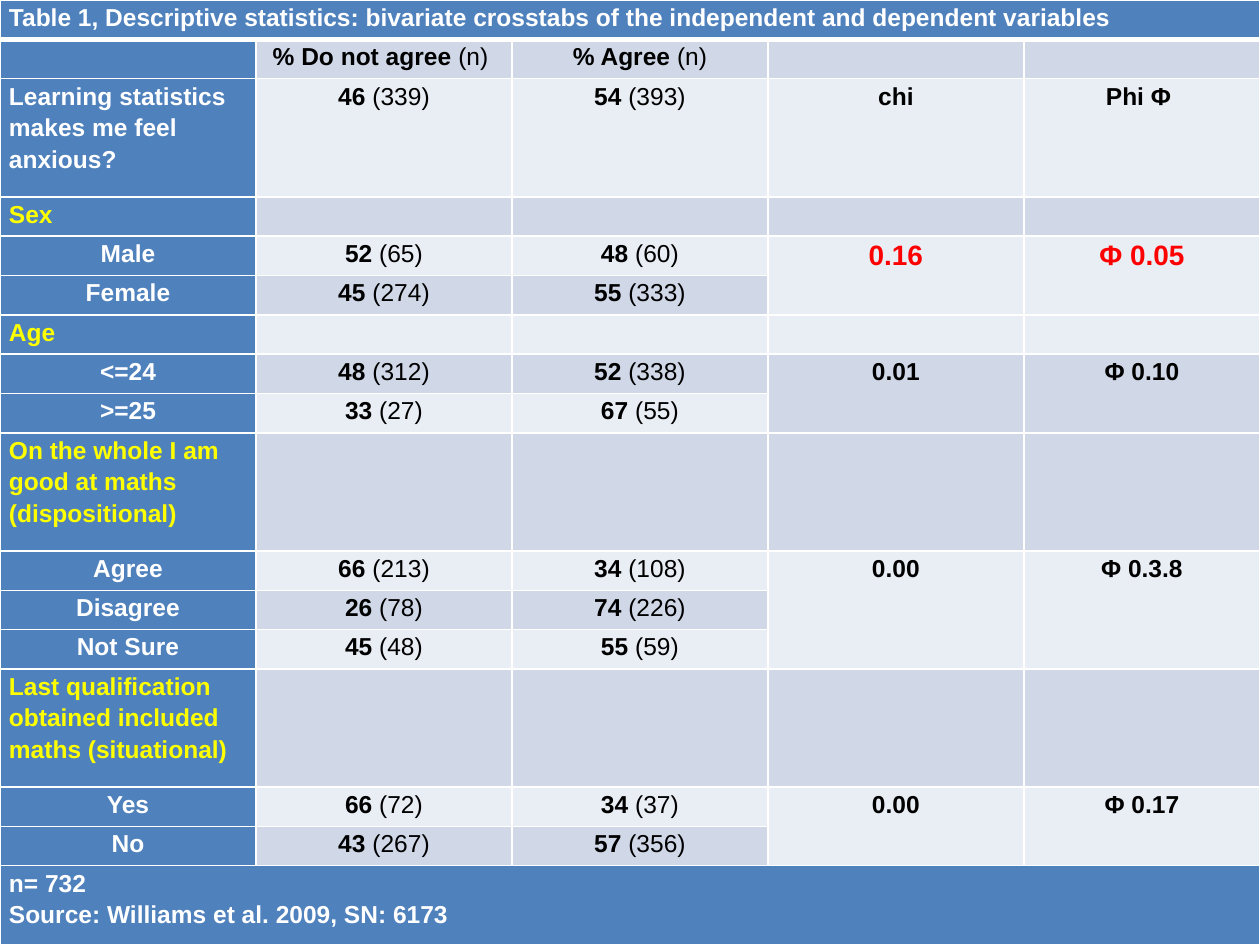
from lxml.etree import SubElement
from pptx import Presentation
from pptx.dml.color import RGBColor
from pptx.enum.text import PP_ALIGN
from pptx.oxml.ns import qn
from pptx.util import Cm, Pt

COLOURS = {
    "header": "4F81BD", "odd": "D0D8E8", "even": "E9EDF4",
    "white": "FFFFFF", "black": "000000", "group": "FFFF00", "alert": "FF0000",
}
FONT = "Arial"
WIDTH, HEIGHT = 25.4, 19.05
COLUMN_WIDTHS = [5.16, 5.16, 5.16, 5.16, 4.76]
COLUMNS = len(COLUMN_WIDTHS)

TITLE = "Table 1, Descriptive statistics: bivariate crosstabs of the independent and dependent variables"
HEADINGS = [("% Do not agree ", "(n) "), ("% Agree ", "(n)")]
QUESTION = ("Learning statistics makes me feel anxious?",
            [("46 ", "(339)"), ("54 ", "(393)"), ("chi",), ("Phi Φ ",)])
# group, height in lines, chi, phi, colour and size of both, answers with percentages and counts
GROUPS = [
    ("Sex", 1, "0.16", "Φ 0.05", "alert", 16,
     [("Male", 52, 65, 48, 60), ("Female", 45, 274, 55, 333)]),
    ("Age", 1, "0.01", "Φ 0.10", "black", 14,
     [("<=24", 48, 312, 52, 338), (">=25", 33, 27, 67, 55)]),
    ("On the whole I am good at maths (dispositional)", 3, "0.00", "Φ 0.3.8", "black", 14,
     [("Agree", 66, 213, 34, 108), ("Disagree", 26, 78, 74, 226), ("Not Sure", 45, 48, 55, 59)]),
    ("Last qualification obtained included maths (situational)", 3, "0.00", "Φ 0.17", "black", 14,
     [("Yes", 66, 72, 34, 37), ("No", 43, 267, 57, 356)]),
]
FOOTER = "n= 732\nSource: Williams et al. 2009, SN: 6173"

# Height of each row in text lines
ROW_LINES = [1, 1, 3]
for group in GROUPS:
    ROW_LINES += [group[1]] + [1] * len(group[-1])
ROW_LINES.append(2)
LAST_ROW = len(ROW_LINES) - 1


def add_borders(cell, bottom_width):
    properties = cell._tc.get_or_add_tcPr()
    for side, width in (("L", 1), ("R", 1), ("T", 1), ("B", bottom_width)):
        line = SubElement(properties, qn(f"a:ln{side}"), w=str(Pt(width)))
        fill = SubElement(line, qn("a:solidFill"))
        SubElement(fill, qn("a:srgbClr"), val=COLOURS["white"])


def format_cell(cell, row, column):
    add_borders(cell, 3 if row == 0 else 1)
    if column == 0 or row in (0, LAST_ROW):
        colour = "header"
    else:
        colour = "odd" if row % 2 else "even"
    cell.fill.solid()
    cell.fill.fore_color.rgb = RGBColor.from_string(COLOURS[colour])
    cell.margin_left = cell.margin_right = Cm(0.18)
    cell.margin_top = cell.margin_bottom = 0
    cell.text_frame.paragraphs[0].font.size = Pt(14)


def write(cell, parts, colour="black", size=14, align=PP_ALIGN.CENTER):
    """Write the first part in bold and any second part in regular weight."""
    cell.text = parts[0]
    for part in parts[1:]:
        cell.text_frame.paragraphs[0].add_run().text = part
    for paragraph in cell.text_frame.paragraphs:
        paragraph.alignment = align
        paragraph.line_spacing = 1.15
        for index, span in enumerate(paragraph.runs):
            span.font.name = FONT
            span.font.size = Pt(size)
            span.font.bold = index == 0
            span.font.color.rgb = RGBColor.from_string(COLOURS[colour])


def write_left(cell, text, colour="white"):
    write(cell, [text], colour, align=PP_ALIGN.LEFT)


def fill_groups(table, row):
    for name, _, chi, phi, colour, size, answers in GROUPS:
        write_left(table.cell(row, 0), name, "group")
        first, last = row + 1, row + len(answers)
        for column, value in ((3, chi), (4, phi)):
            table.cell(first, column).merge(table.cell(last, column))
            write(table.cell(first, column), [value], colour, size)
        for row, (answer, no, no_count, yes, yes_count) in enumerate(answers, first):
            write(table.cell(row, 0), [answer], "white")
            write(table.cell(row, 1), [f"{no} ", f"({no_count})"])
            write(table.cell(row, 2), [f"{yes} ", f"({yes_count})"])
        row = last + 1


def main():
    deck = Presentation()
    deck.slide_width, deck.slide_height = Cm(WIDTH), Cm(HEIGHT)
    page = deck.slides.add_slide(deck.slide_layouts[6])
    table = page.shapes.add_table(len(ROW_LINES), COLUMNS, 0, 0, Cm(WIDTH), Cm(HEIGHT)).table
    for column, width in zip(table.columns, COLUMN_WIDTHS):
        column.width = Cm(width)
    for index, lines in enumerate(ROW_LINES):
        table.rows[index].height = Cm(HEIGHT * lines / sum(ROW_LINES))
        for column in range(COLUMNS):
            format_cell(table.cell(index, column), index, column)

    for row, text in ((0, TITLE), (LAST_ROW, FOOTER)):
        table.cell(row, 0).merge(table.cell(row, COLUMNS - 1))
        write_left(table.cell(row, 0), text)
    for column, parts in enumerate(HEADINGS, 1):
        write(table.cell(1, column), parts)
    question, values = QUESTION
    write_left(table.cell(2, 0), question)
    for column, parts in enumerate(values, 1):
        write(table.cell(2, column), parts)
    fill_groups(table, 3)
    deck.save("out.pptx")


if __name__ == "__main__":
    main()
